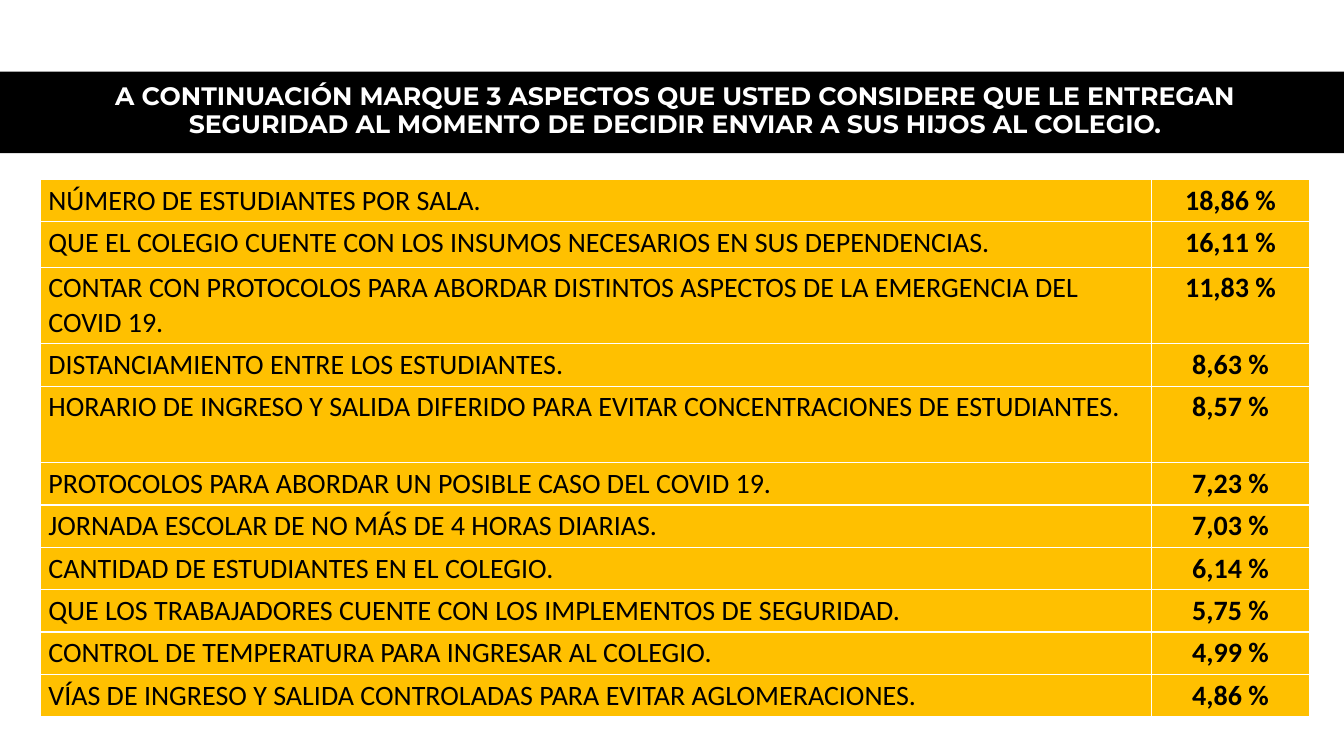
from dataclasses import dataclass

from pptx import Presentation
from pptx.dml.color import RGBColor
from pptx.enum.shapes import MSO_SHAPE as Shape
from pptx.enum.text import MSO_ANCHOR as Anchor, PP_ALIGN as Align
from pptx.util import Emu, Inches, Pt

COLORS = {"band": "000000", "title": "FFFFFF", "cell": "FFC000", "text": "000000"}
WIDTH, HEIGHT = Inches(13.33), Inches(7.5)
TITLE = (
    "A CONTINUACIÓN MARQUE 3 ASPECTOS QUE USTED CONSIDERE QUE LE ENTREGAN "
    "SEGURIDAD AL MOMENTO DE DECIDIR ENVIAR A SUS HIJOS AL COLEGIO."
)

# Percentages of the slide's width and height
COLUMN_WIDTHS = (82.67, 11.78)
SINGLE, LOOSE, DOUBLE = 5.6, 6, 10.13


@dataclass(frozen=True)
class Aspect:
    name: str
    share: str
    height: float = SINGLE


ASPECTS = (
    Aspect("NÚMERO DE ESTUDIANTES POR SALA.", "18,86 %"),
    Aspect("QUE EL COLEGIO CUENTE CON LOS INSUMOS NECESARIOS EN SUS DEPENDENCIAS.",
           "16,11 %", LOOSE),
    Aspect("CONTAR CON PROTOCOLOS PARA ABORDAR DISTINTOS ASPECTOS DE LA EMERGENCIA "
           "DEL COVID 19.", "11,83 %", DOUBLE),
    Aspect("DISTANCIAMIENTO ENTRE LOS ESTUDIANTES.", "8,63 %"),
    Aspect("HORARIO DE INGRESO Y SALIDA DIFERIDO PARA EVITAR CONCENTRACIONES DE "
           "ESTUDIANTES.", "8,57 %", DOUBLE),
    Aspect("PROTOCOLOS PARA ABORDAR UN POSIBLE CASO DEL COVID 19.", "7,23 %"),
    Aspect("JORNADA ESCOLAR DE NO MÁS DE 4 HORAS DIARIAS.", "7,03 %"),
    Aspect("CANTIDAD DE ESTUDIANTES EN EL COLEGIO.", "6,14 %"),
    Aspect("QUE LOS TRABAJADORES CUENTE CON LOS IMPLEMENTOS DE SEGURIDAD.", "5,75 %"),
    Aspect("CONTROL DE TEMPERATURA PARA INGRESAR AL COLEGIO.", "4,99 %"),
    Aspect("VÍAS DE INGRESO Y SALIDA CONTROLADAS PARA EVITAR AGLOMERACIONES.", "4,86 %"),
)


def color(name: str) -> RGBColor:
    return RGBColor.from_string(COLORS[name])


def across(percent: float) -> Emu:
    return Emu(round(WIDTH * percent / 100))


def down(percent: float) -> Emu:
    return Emu(round(HEIGHT * percent / 100))


def format_paragraph(paragraph, typeface: str, size: int, ink: str,
                     bold: bool, align: Align) -> None:
    paragraph.alignment = align
    font = paragraph.font
    font.name, font.size, font.bold = typeface, Pt(size), bold
    font.color.rgb = color(ink)


def add_title(slide) -> None:
    """Fill the title placeholder and lay the full-width band behind it."""
    title = slide.shapes.title
    title.left, title.top = across(2.1), down(9.33)
    title.width, title.height = across(96.25), down(10.8)
    frame = title.text_frame
    frame.text = TITLE
    frame.word_wrap = True
    frame.vertical_anchor = Anchor.MIDDLE
    paragraph = frame.paragraphs[0]
    paragraph.line_spacing = 0.9
    format_paragraph(paragraph, "Montserrat", 18, "title", True, Align.CENTER)

    band = slide.shapes.add_shape(Shape.RECTANGLE, 0, down(9.47), WIDTH, down(10.8))
    band.shadow.inherit = False
    band.fill.solid()
    band.fill.fore_color.rgb = color("band")
    band.line.fill.background()
    title.element.addprevious(band.element)


def fill_cell(cell, text: str, bold: bool, align: Align) -> None:
    cell.fill.solid()
    cell.fill.fore_color.rgb = color("cell")
    cell.margin_left = cell.margin_right = Inches(0.08)
    cell.margin_top = cell.margin_bottom = Inches(0.04)
    cell.text = text
    format_paragraph(cell.text_frame.paragraphs[0], "Calibri", 20, "text", bold, align)


def add_aspect_table(slide) -> None:
    table = slide.shapes.add_table(
        len(ASPECTS), len(COLUMN_WIDTHS), across(3), down(23.73),
        across(sum(COLUMN_WIDTHS)), down(sum(aspect.height for aspect in ASPECTS)),
    ).table
    table.horz_banding = False
    for column, width in zip(table.columns, COLUMN_WIDTHS):
        column.width = across(width)
    for row, aspect in zip(table.rows, ASPECTS):
        row.height = down(aspect.height)
        name_cell, share_cell = row.cells
        fill_cell(name_cell, aspect.name, False, Align.LEFT)
        fill_cell(share_cell, aspect.share, True, Align.CENTER)


def main() -> None:
    presentation = Presentation()
    presentation.slide_width, presentation.slide_height = WIDTH, HEIGHT
    slide = presentation.slides.add_slide(presentation.slide_layouts.get_by_name("Title Only"))
    add_title(slide)
    add_aspect_table(slide)
    presentation.save("out.pptx")


if __name__ == "__main__":
    main()
